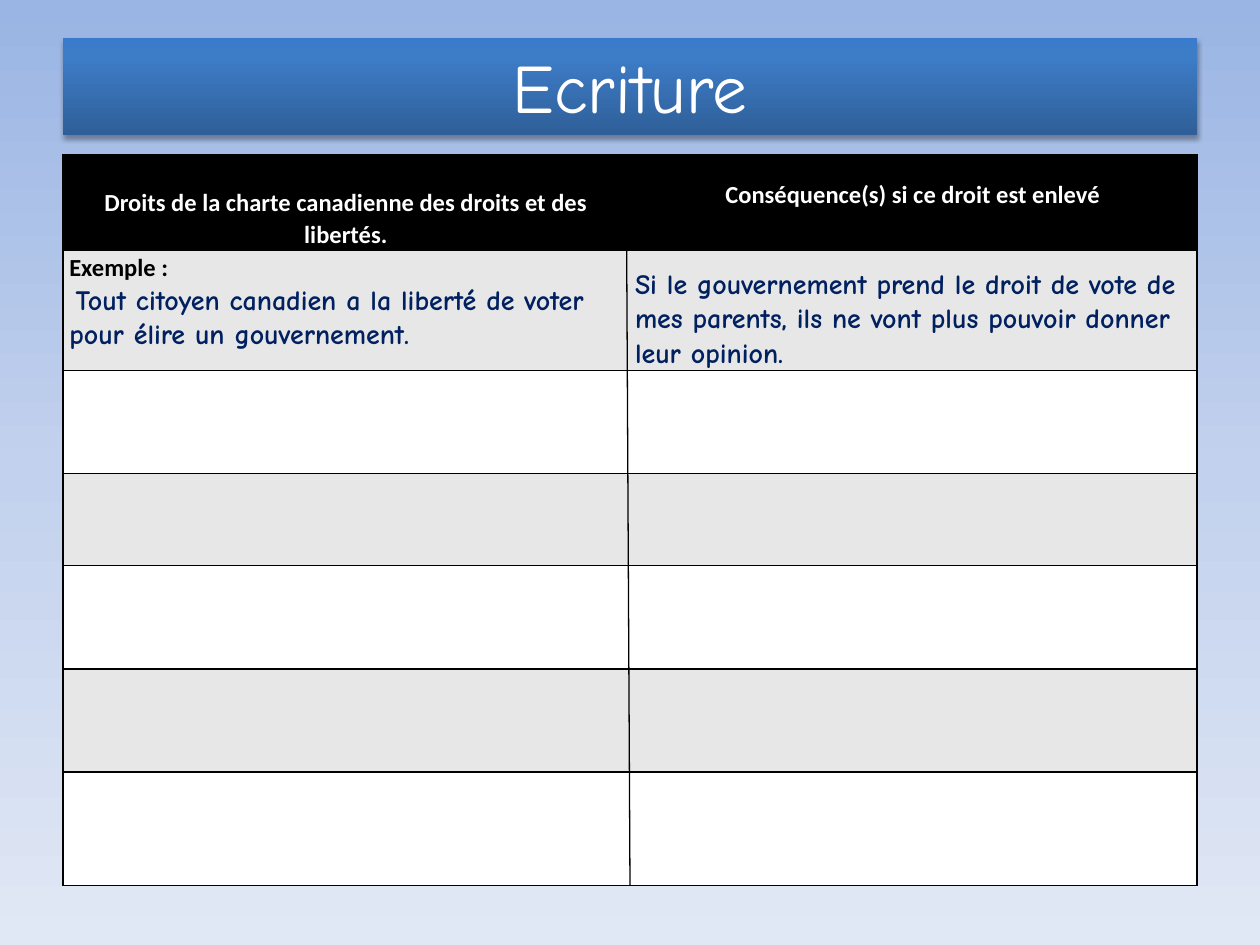
from dataclasses import dataclass

import lxml.etree
import pptx
import pptx.dml.color
import pptx.enum.shapes
import pptx.enum.text
import pptx.oxml.ns
import pptx.util

Inches, Pt = pptx.util.Inches, pptx.util.Pt
ALIGN = pptx.enum.text.PP_ALIGN
qn = pptx.oxml.ns.qn

COLORS = {
    "black": "000000", "white": "FFFFFF", "band": "E7E7E7", "navy": "002060",
    "sky_top": "9AB5E4", "sky_mid": "C2D1ED", "sky_low": "E1E8F5",
    "bar_low": "2F5F99", "bar_mid": "3D7CC7", "bar_top": "3A7CCB",
}
NO_STYLE = "{2D5ABB26-0587-4C30-8999-92F81FD0307C}"
COL_WIDTHS = (4.49, 4.51)
ROW_HEIGHTS = (0.76, 0.95, 0.82, 0.73, 0.82, 0.82, 0.9)
LEFT, TOP, WIDTH = 0.5, 1.23, sum(COL_WIDTHS)


@dataclass
class Entry:
    row: int
    col: int
    text: str
    top: float = 0  # cell top margin, inches
    size: float = 14
    font: str = "Calibri"
    color: str = "white"
    align: ALIGN = ALIGN.LEFT
    indent: float = 0  # first-line indent, inches


HAND = {"size": 16, "font": "Comic Neue", "color": "navy"}
ENTRIES = [
    Entry(0, 0, "Droits de la charte canadienne des droits et des libertés.",
          top=0.25, align=ALIGN.CENTER),
    Entry(0, 1, "Conséquence(s) si ce droit est enlevé",
          top=0.18, align=ALIGN.CENTER),
    Entry(1, 0, "Exemple :", color="black"),
    Entry(1, 0, "Tout citoyen canadien a la liberté de voter pour élire un "
          "gouvernement.", indent=0.05, **HAND),
    Entry(1, 1, "Si le gouvernement prend le droit de vote de mes parents, ils "
          "ne vont plus pouvoir donner leur opinion.", top=0.13, **HAND),
]


def rgb(name: str) -> pptx.dml.color.RGBColor:
    return pptx.dml.color.RGBColor.from_string(COLORS[name])


def sub(parent, tag: str, **attrs):
    return lxml.etree.SubElement(
        parent, qn(tag), {k: str(v) for k, v in attrs.items()})


def set_gradient(fill, parent, angle: int, stops: list) -> None:
    """Replace the fill of parent by a linear gradient of (percent, colour)."""
    fill.solid()
    old = parent.find(qn("a:solidFill"))
    grad = lxml.etree.Element(qn("a:gradFill"), rotWithShape="1")
    gs_list = sub(grad, "a:gsLst")
    for percent, name in stops:
        gs = sub(gs_list, "a:gs", pos=percent * 1000)
        sub(gs, "a:srgbClr", val=COLORS[name])
    sub(grad, "a:lin", ang=angle * 60000, scaled=0)
    parent.replace(old, grad)


def add_text(tf, text: str, *, size: float, font: str, color: str,
             align: ALIGN, bold: bool = False, spacing: float = 1.0,
             indent: float = 0) -> None:
    p = tf.paragraphs[0] if not tf.text else tf.add_paragraph()
    p.alignment = align
    p.line_spacing = spacing
    if indent:
        p._p.get_or_add_pPr().set("indent", str(Inches(indent)))
    r = p.add_run()
    r.text = text
    r.font.size, r.font.name, r.font.bold = Pt(size), font, bold
    r.font.color.rgb = rgb(color)


def set_border(cell, sides: str) -> None:
    tc_pr = cell._tc.get_or_add_tcPr()
    for side in sides:
        ln = sub(tc_pr, f"a:ln{side}", w=Pt(1))
        sub(sub(ln, "a:solidFill"), "a:srgbClr", val=COLORS["black"])


def add_title(s) -> None:
    sp = s.shapes.add_shape(pptx.enum.shapes.MSO_SHAPE.RECTANGLE, Inches(LEFT),
                            Inches(0.3), Inches(WIDTH), Inches(0.77))
    sp_pr = sp._element.spPr
    set_gradient(sp.fill, sp_pr, 270,
                 [(0, "bar_low"), (80, "bar_mid"), (100, "bar_top")])
    sp.line.fill.background()
    sp.shadow.inherit = False
    shadow = sub(sp_pr.find(qn("a:effectLst")), "a:outerShdw", blurRad=Pt(3.1),
                 dist=Pt(1.8), dir=90 * 60000, rotWithShape=0)
    sub(sub(shadow, "a:srgbClr", val=COLORS["black"]), "a:alpha", val=35000)
    tf = sp.text_frame
    tf.word_wrap = True
    tf.vertical_anchor = pptx.enum.text.MSO_ANCHOR.MIDDLE
    add_text(tf, "Ecriture", size=39.6, font="Comic Neue", color="white",
             align=ALIGN.CENTER)


def add_rights_table(s) -> None:
    frame = s.shapes.add_table(len(ROW_HEIGHTS), len(COL_WIDTHS), Inches(LEFT),
                               Inches(TOP), Inches(WIDTH),
                               Inches(sum(ROW_HEIGHTS)))
    table = frame.table
    table.first_row = table.horz_banding = False
    table._tbl.tblPr.find(qn("a:tableStyleId")).text = NO_STYLE
    for column, width in zip(table.columns, COL_WIDTHS):
        column.width = Inches(width)
    for i, height in enumerate(ROW_HEIGHTS):
        table.rows[i].height = Inches(height)
        fill = "black" if i == 0 else "band" if i % 2 else "white"
        for j, sides in enumerate(("LTB", "RTB")):
            cell = table.cell(i, j)
            cell.margin_left = cell.margin_right = Inches(0.05)
            cell.margin_top = cell.margin_bottom = 0
            set_border(cell, sides)
            cell.fill.solid()
            cell.fill.fore_color.rgb = rgb(fill)
    for e in ENTRIES:
        cell = table.cell(e.row, e.col)
        if e.top:
            cell.margin_top = Inches(e.top)
        add_text(cell.text_frame, e.text, size=e.size, font=e.font,
                 color=e.color, align=e.align, bold=True, spacing=1.07,
                 indent=e.indent)


def add_divider(s) -> None:
    line = s.shapes.add_connector(
        pptx.enum.shapes.MSO_CONNECTOR.STRAIGHT, Inches(4.97), Inches(TOP),
        Inches(5), Inches(TOP + sum(ROW_HEIGHTS)))
    line.line.color.rgb = rgb("black")
    line.line.width = Pt(0.75)
    sub(line._element.spPr, "a:effectLst")


def main() -> None:
    prs = pptx.Presentation()
    prs.slide_width, prs.slide_height = Inches(10), Inches(7.5)
    s = prs.slides.add_slide(prs.slide_layouts[6])

    # Background
    fill = s.background.fill
    set_gradient(fill, s._element.find(".//" + qn("p:bgPr")), 90,
                 [(0, "sky_top"), (50, "sky_mid"), (100, "sky_low")])

    # Title bar, table and the line between its columns
    add_title(s)
    add_rights_table(s)
    add_divider(s)
    prs.save("out.pptx")


if __name__ == "__main__":
    main()
